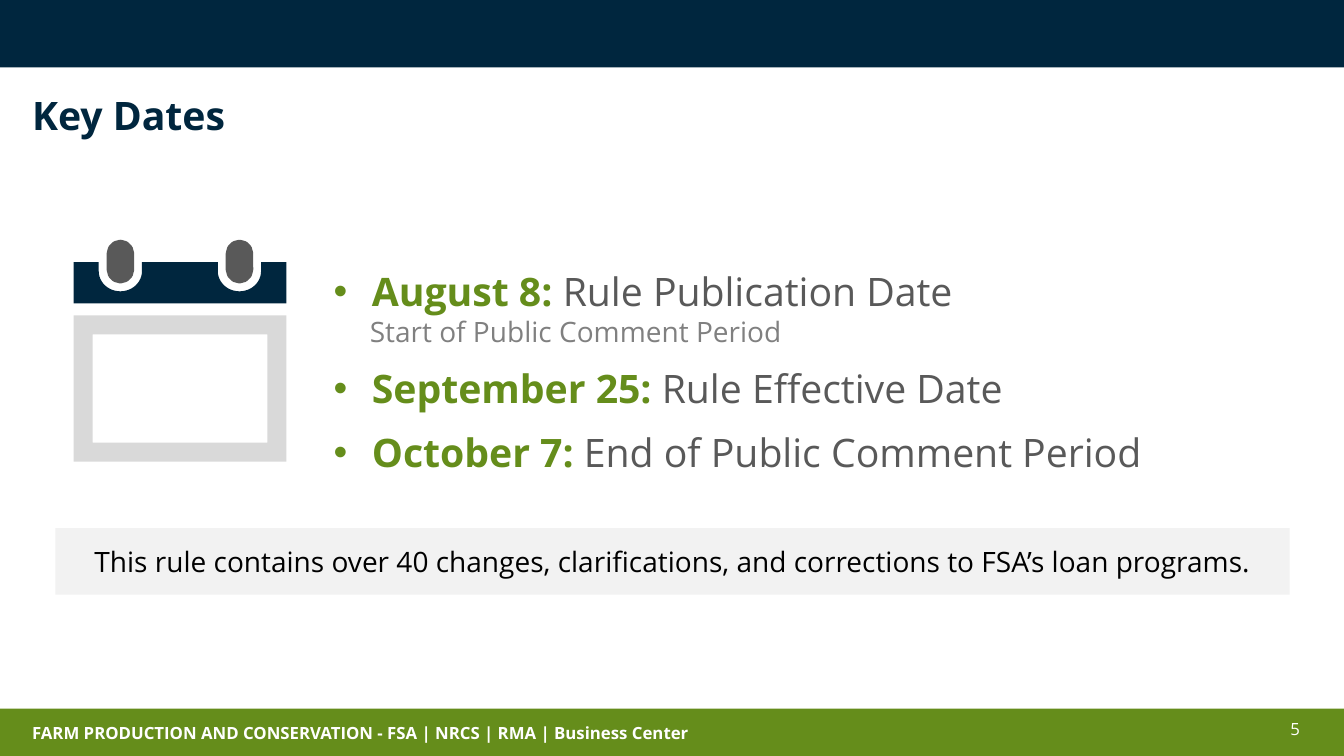
from dataclasses import dataclass
from math import cos, pi, sin

from lxml import etree
from pptx import Presentation
from pptx.dml.color import RGBColor
from pptx.enum.shapes import MSO_SHAPE
from pptx.enum.text import MSO_ANCHOR, PP_ALIGN
from pptx.oxml.ns import qn
from pptx.util import Emu, Inches, Pt

RECT = MSO_SHAPE.RECTANGLE
PILL = MSO_SHAPE.ROUNDED_RECTANGLE
FRAME = MSO_SHAPE.FRAME
MIDDLE = MSO_ANCHOR.MIDDLE
CENTER = PP_ALIGN.CENTER
WIDE, HIGH = Inches(13.33), Inches(7.5)


@dataclass(frozen=True)
class Theme:
    """Fonts, colours and type sizes of the slide."""
    font: str = "Open Sans"
    navy: str = "00263E"
    green: str = "658D1B"
    dark: str = "595959"
    gray: str = "808080"
    light: str = "D9D9D9"
    pale: str = "F2F2F2"
    white: str = "FFFFFF"
    black: str = "000000"
    head: int = 28
    body: int = 20
    foot: int = 12


THEME = Theme()
DATES = [
    ("August 8: ", "Rule Publication Date", 0),
    ("September 25: ", "Rule Effective Date", 12),
    ("October 7: ", "End of Public Comment Period", 12),
]
RINGS = (8.96, 17.82)


def across(share):
    """Turn a percentage of the slide's width into a length."""
    return Emu(round(WIDE * share / 100))


def down(share):
    """Turn a percentage of the slide's height into a length."""
    return Emu(round(HIGH * share / 100))


def place(box):
    """Turn a box of percentages into left, top, width and height."""
    left, top, width, height = box
    return across(left), down(top), across(width), down(height)


def style(run, size, color, bold=False):
    """Set the font of a run."""
    run.font.name = THEME.font
    run.font.size = Pt(size)
    run.font.bold = bold
    run.font.color.rgb = RGBColor.from_string(color)


def paint(shape, color):
    """Give a shape a flat fill without line or shadow."""
    shape.shadow.inherit = False
    shape.fill.solid()
    shape.fill.fore_color.rgb = RGBColor.from_string(color)
    shape.line.fill.background()


def add_block(slide, box, color, kind=RECT):
    """Draw a flat preset shape."""
    block = slide.shapes.add_shape(kind, *place(box))
    paint(block, color)
    return block


def add_frame(slide, box):
    """Add an empty text box that wraps."""
    frame = slide.shapes.add_textbox(*place(box)).text_frame
    frame.word_wrap = True
    return frame


def add_label(slide, box, text, size, color, bold=False):
    """Write one line of text and return its paragraph."""
    frame = add_frame(slide, box)
    frame.text = text
    line = frame.paragraphs[0]
    style(line.runs[0], size, color, bold)
    return line


def add_bullet(line):
    """Hang a round bullet before a paragraph."""
    props = line._p.get_or_add_pPr()
    props.set("marL", str(Inches(0.38)))
    props.set("indent", str(-Inches(0.38)))
    font = etree.SubElement(props, qn("a:buFont"))
    font.set("typeface", "Arial")
    etree.SubElement(props, qn("a:buChar")).set("char", "•")


def add_date(line, day, event, after):
    """Write a bulleted date and its event."""
    add_bullet(line)
    line.text = day
    line.add_run().text = event
    line.space_after = Pt(after)
    style(line.runs[0], THEME.head, THEME.green, True)
    style(line.runs[1], THEME.head, THEME.dark)


def add_dates(slide):
    """Write the list of dates with the note under the first."""
    frame = add_frame(slide, (24.08, 34.67, 70.44, 29.2))
    add_date(frame.paragraphs[0], *DATES[0])
    note = frame.add_paragraph()
    note.text = "Start of Public Comment Period"
    note._p.get_or_add_pPr().set("marL", str(Inches(0.36)))
    note.space_after = Pt(12)
    style(note.runs[0], THEME.body, THEME.gray)
    for date in DATES[1:]:
        add_date(frame.add_paragraph(), *date)


def notch(mid, top):
    """List the points of a round notch, from left to right."""
    steps = [pi * step / 24 for step in range(25)]
    curve = [(mid - 1.61 * cos(turn), top + 1.2 + 2.67 * sin(turn))
             for turn in steps]
    return [(mid - 1.61, top), *curve, (mid + 1.61, top)]


def add_header(slide, box):
    """Draw the calendar's top strip with a notch for each ring."""
    left, top, width, height = box
    points = [point for mid in RINGS for point in notch(mid, top)]
    points += [(left + width, top), (left + width, top + height),
               (left, top + height)]
    path = slide.shapes.build_freeform(across(left), down(top))
    path.add_line_segments([(across(x), down(y)) for x, y in points])
    paint(path.convert_to_shape(), THEME.navy)


def add_calendar(slide):
    """Draw the calendar icon."""
    sheet = add_block(slide, (5.48, 41.73, 15.83, 19.33), THEME.light, FRAME)
    sheet.adjustments[0] = 0.13
    add_header(slide, (5.48, 34.67, 15.83, 5.47))
    for mid in RINGS:
        ring = add_block(slide, (mid - 0.71, 32.27, 1.42, 4.67),
                         THEME.dark, PILL)
        ring.adjustments[0] = 0.5
        ring.line.color.rgb = RGBColor.from_string(THEME.dark)
        ring.line.width = Pt(6)


def add_banner(slide):
    """Draw the pale banner with its centred sentence."""
    frame = add_block(slide, (4.13, 69.87, 91.82, 8.8), THEME.pale).text_frame
    frame.word_wrap = True
    frame.vertical_anchor = MIDDLE
    frame.text = ("This rule contains over 40 changes, clarifications, "
                  "and corrections to FSA’s loan programs.")
    line = frame.paragraphs[0]
    line.alignment = CENTER
    style(line.runs[0], THEME.body, THEME.black)


def main():
    """Build the slide and save it."""
    deck = Presentation()
    deck.slide_width, deck.slide_height = WIDE, HIGH
    slide = deck.slides.add_slide(deck.slide_layouts[6])
    add_block(slide, (0, 93.73, 100, 6.27), THEME.green)
    add_block(slide, (0, 0, 100, 8.93), THEME.navy)
    add_label(slide, (1.65, 94.93, 58.81, 6.67),
              "FARM PRODUCTION AND CONSERVATION - FSA | NRCS | RMA | "
              "Business Center", THEME.foot, THEME.white, True)
    title = add_label(slide, (1.65, 12.13, 95.87, 5.73), "Key Dates",
                      THEME.head, THEME.navy, True)
    title.line_spacing = 0.9
    add_label(slide, (95.27, 94.4, 3.38, 5.33), "5", THEME.foot, THEME.white)
    add_calendar(slide)
    add_dates(slide)
    add_banner(slide)
    deck.save("out.pptx")


if __name__ == "__main__":
    main()
